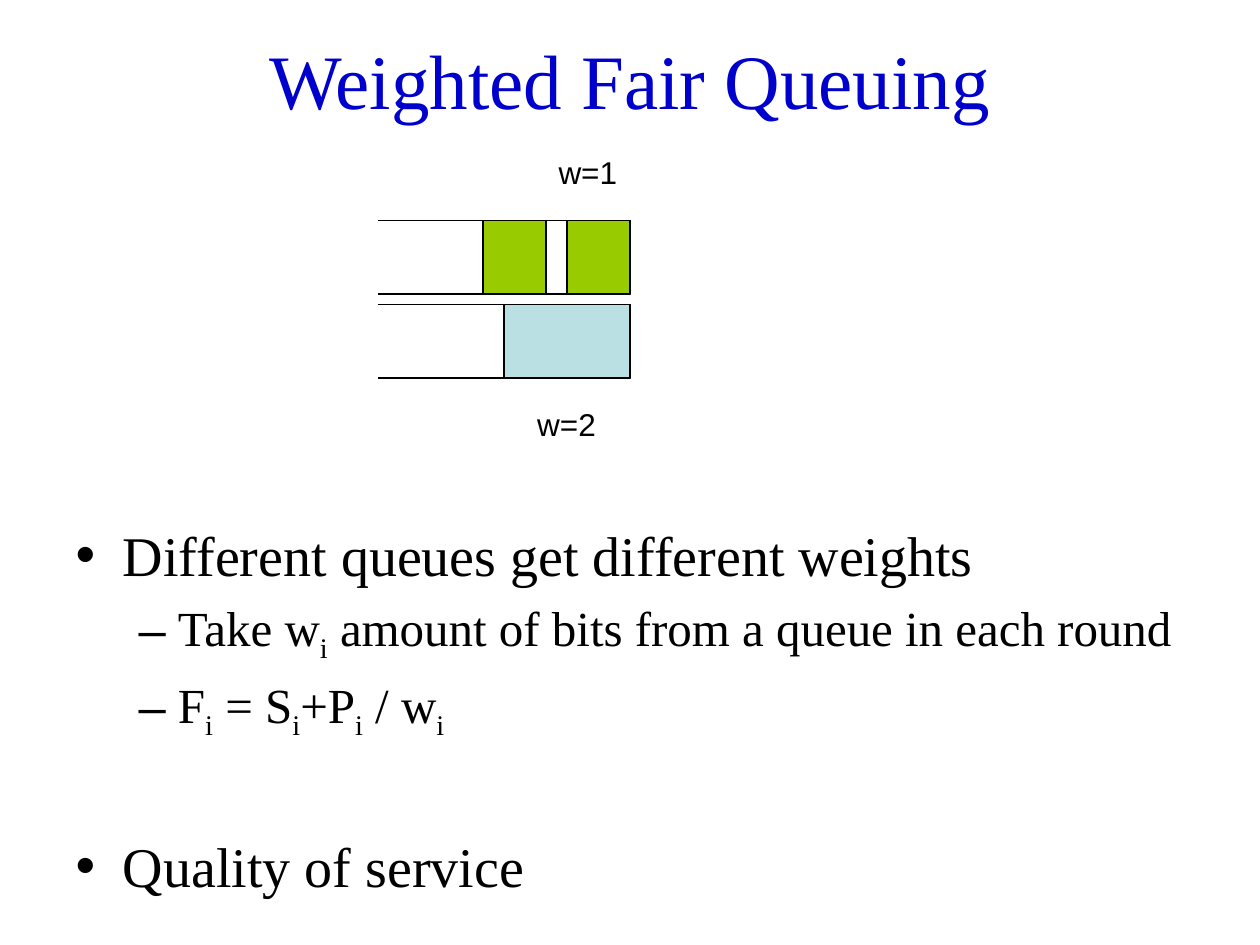
from pptx import Presentation
from pptx.dml.color import RGBColor
from pptx.enum.shapes import MSO_SHAPE as Shape
from pptx.enum.text import MSO_ANCHOR as Anchor, MSO_AUTO_SIZE as AutoSize, PP_ALIGN as Align
from pptx.util import Cm, Pt


def color(hex_string):
    return RGBColor.from_string(hex_string)


def add_run(paragraph, text, size, font="Times New Roman", hex_string="000000"):
    run = paragraph.add_run()
    run.text = text
    run.font.size = Pt(size)
    run.font.name = font
    run.font.color.rgb = color(hex_string)
    return run


presentation = Presentation()
presentation.slide_width, presentation.slide_height = Cm(25.4), Cm(19.05)
slide = presentation.slides.add_slide(presentation.slide_layouts[1])
title, body = slide.placeholders

# Title
title.left, title.top, title.width, title.height = Cm(1.27), Cm(0), Cm(22.86), Cm(3.18)
title.text_frame.vertical_anchor = Anchor.MIDDLE
paragraph = title.text_frame.paragraphs[0]
paragraph.alignment = Align.CENTER
add_run(paragraph, "Weighted Fair Queuing", 44, hex_string="0000CC")

# Bullet list: level and text pieces, every second piece is a subscript
body.left, body.top, body.width, body.height = Cm(1.27), Cm(10.36), Cm(22.86), Cm(6.65)
body.text_frame.auto_size = AutoSize.NONE
bullets = [
    (0, ["Different queues get different weights"]),
    (1, ["Take w", "i", " amount of bits from a queue in each round"]),
    (1, ["F", "i", " = S", "i", "+P", "i", " / w", "i"]),
    (0, ["Quality of service"]),
]
for number, (level, pieces) in enumerate(bullets):
    paragraph = body.text_frame.paragraphs[0] if number == 0 else body.text_frame.add_paragraph()
    paragraph.level = level
    for index, piece in enumerate(pieces):
        run = add_run(paragraph, piece, 28 if level else 32)
        if index % 2:
            run.font._element.set("baseline", "-25000")
paragraph.space_before = Pt(52)  # sets the last topic apart

# Packets: left, top, width, fill
queue_left, queue_right, queue_height = 7.62, 12.7, 1.48
queue_tops = [4.45, 6.14]
packets = [
    (9.74, queue_tops[0], 1.27, "99CC00"),
    (11.43, queue_tops[0], 1.27, "99CC00"),
    (10.16, queue_tops[1], 2.54, "BBE0E3"),
]
outlined = []
for left, top, width, fill in packets:
    packet = slide.shapes.add_shape(Shape.RECTANGLE, Cm(left), Cm(top), Cm(width), Cm(queue_height))
    packet.fill.solid()
    packet.fill.fore_color.rgb = color(fill)
    outlined.append(packet)

# Queues, open on the left
for top in queue_tops:
    builder = slide.shapes.build_freeform(Cm(queue_left), Cm(top))
    bottom = top + queue_height
    corners = [(queue_right, top), (queue_right, bottom), (queue_left, bottom)]
    builder.add_line_segments([(Cm(x), Cm(y)) for x, y in corners], close=False)
    queue = builder.convert_to_shape()
    queue.fill.background()
    outlined.append(queue)

for shape in outlined:
    shape.shadow.inherit = False
    shape.line.color.rgb = color("000000")
    shape.line.width = Pt(0.75)

# Weight labels
for text, left, top in [("w=2", 10.58, 8.04), ("w=1", 11.01, 2.96)]:
    label = slide.shapes.add_textbox(Cm(left), Cm(top), Cm(2.12), Cm(1.27))
    label.text_frame.word_wrap = True
    add_run(label.text_frame.paragraphs[0], text, 18, "Arial")

presentation.save("out.pptx")
